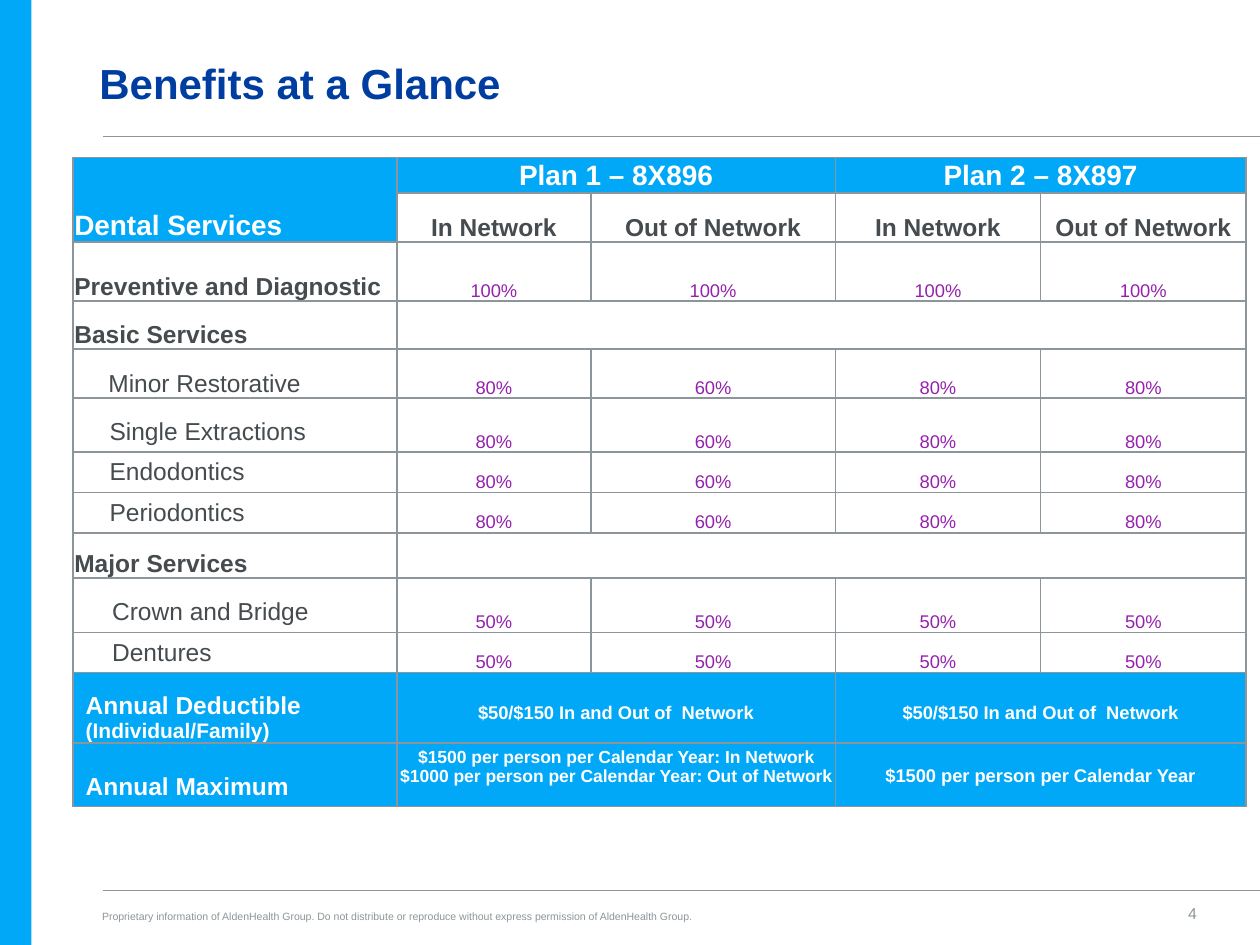
from lxml import etree
from pptx import Presentation
from pptx import util as u
from pptx.dml.color import RGBColor
from pptx.enum import shapes, text
from pptx.oxml.ns import qn

WIDTH, HEIGHT = 10, 7.5
BLUE, NAVY, GREY, INK, PURPLE, WHITE = (
    "00A8F7", "003DA1", "8C9599", "454B4E", "9521AD", "FFFFFF")
LEFT, CENTER, RIGHT = text.PP_ALIGN.LEFT, text.PP_ALIGN.CENTER, text.PP_ALIGN.RIGHT
MIDDLE, BOTTOM = text.MSO_ANCHOR.MIDDLE, text.MSO_ANCHOR.BOTTOM

# Content
TITLE = "Benefits at a Glance"
FOOTER = ("Proprietary information of AldenHealth Group. Do not distribute or "
          "reproduce without express permission of AldenHealth Group.")
PAGE = "4"
NETWORKS = ["In Network", "Out of Network"] * 2
FULL, BASIC, MAJOR = ["100%"] * 4, ["80%", "60%", "80%", "80%"], ["50%"] * 4
DEDUCTIBLE = "$50/$150 In and Out of  Network"
MAXIMUM = ("$1500 per person per Calendar Year: In Network\n"
           "$1000 per person per Calendar Year: Out of Network")

# Kind, row height, label, label indent, values (two values: one per plan)
ROWS = [
    ("plans", 0.28, "Dental Services", 0.01, ["Plan 1 – 8X896", "Plan 2 – 8X897"]),
    ("networks", 0.39, "", 0.01, NETWORKS),
    ("group", 0.47, "Preventive and Diagnostic", 0.01, FULL),
    ("group", 0.38, "Basic Services", 0.01, []),
    ("first", 0.39, "Minor Restorative", 0.28, BASIC),
    ("service", 0.43, "Single Extractions", 0.29, BASIC),
    ("service", 0.32, "Endodontics", 0.29, BASIC),
    ("service", 0.32, "Periodontics", 0.29, BASIC),
    ("group", 0.36, "Major Services", 0.01, []),
    ("service", 0.43, "Crown and Bridge", 0.31, MAJOR),
    ("service", 0.32, "Dentures", 0.31, MAJOR),
    ("total", 0.56, "Annual Deductible\n(Individual/Family)", 0.1, [DEDUCTIBLE] * 2),
    ("limit", 0.49, "Annual Maximum", 0.1,
     [MAXIMUM, "$1500 per person per Calendar Year"]),
]
COLUMNS = [2.57, 1.54, 1.94, 1.63, 1.63]

# Kind: fill, label (size, colour, bold, bottom inset), value (same)
STYLES = {
    "plans": (BLUE, (16, WHITE, True, 0), (16, WHITE, True, 0)),
    "networks": (None, (14, INK, True, 0), (14, INK, True, 0)),
    "group": (None, (14, INK, True, 0), (10.5, PURPLE, False, 0)),
    "first": (None, (14, INK, False, 0), (10.5, PURPLE, False, 0)),
    "service": (None, (14, INK, False, 0.05), (10.5, PURPLE, False, 0)),
    "total": (BLUE, (14, WHITE, True, 0), (10.5, WHITE, True, 0.16)),
    "limit": (BLUE, (14, WHITE, True, 0.05), (10.5, WHITE, True, 0.16)),
}


def rgb(value):
    return RGBColor.from_string(value)


def write(frame, words, size, color, bold=False, align=LEFT, spacing=None):
    frame.text = words
    for paragraph in frame.paragraphs:
        paragraph.alignment = align
        paragraph.line_spacing = spacing
        for run in paragraph.runs:
            run.font.name, run.font.size, run.font.bold = "Arial", u.Pt(size), bold
            run.font.color.rgb = rgb(color)


def add_text(box, words, size, color, anchor, inset=None, **format):
    frame = slide.shapes.add_textbox(*map(u.Inches, box)).text_frame
    frame.word_wrap = True
    frame.vertical_anchor = anchor
    if inset is not None:
        frame.margin_left = frame.margin_right = u.Inches(inset)
        frame.margin_top = frame.margin_bottom = u.Inches(inset)
    write(frame, words, size, color, **format)


def add_borders(cell):
    properties = cell._tc.get_or_add_tcPr()
    for index, side in enumerate(("lnL", "lnR", "lnT", "lnB")):
        line = etree.Element(qn(f"a:{side}"), w=str(u.Pt(1)))
        solid = etree.SubElement(line, qn("a:solidFill"))
        etree.SubElement(solid, qn("a:srgbClr"), val=GREY)
        properties.insert(index, line)


def fill_cell(cell, words, style, indent, align):
    size, color, bold, bottom = style
    cell.margin_left, cell.margin_bottom = u.Inches(indent), u.Inches(bottom)
    if words:
        write(cell.text_frame, words, size, color, bold, align)


prs = Presentation()
prs.slide_width, prs.slide_height = u.Inches(WIDTH), u.Inches(HEIGHT)
slide = prs.slides.add_slide(prs.slide_layouts[6])

# Rules above and below the content
for y in (1.08, 7.07):
    rule = slide.shapes.add_connector(
        shapes.MSO_CONNECTOR.STRAIGHT,
        u.Inches(0.82), u.Inches(y), u.Inches(WIDTH), u.Inches(y))
    rule.line.color.rgb = rgb(GREY)
    rule.line.width = u.Pt(0.5)
    etree.SubElement(rule._element.spPr, qn("a:effectLst"))

# Side band
band = slide.shapes.add_shape(
    shapes.MSO_SHAPE.RECTANGLE, 0, 0, u.Inches(0.25), u.Inches(HEIGHT))
band.shadow.inherit = False
band.fill.solid()
band.fill.fore_color.rgb = rgb(BLUE)
band.line.fill.background()

# Title, footer and page number
add_text((0.69, 0.25, 6.5, 0.86), TITLE, 24, NAVY, MIDDLE, bold=True, spacing=0.9)
add_text((0.81, 7.22, 6.39, 0.1), FOOTER, 6, GREY, BOTTOM, inset=0)
add_text((8.33, 7.14, 1.17, 0.18), PAGE, 9, GREY, BOTTOM, inset=0, align=RIGHT)

# Benefits table
benefits = slide.shapes.add_table(
    len(ROWS), len(COLUMNS), u.Inches(0.58), u.Inches(1.25),
    u.Inches(sum(COLUMNS)), u.Inches(sum(row[1] for row in ROWS))).table
benefits.first_row = benefits.horz_banding = False
for column, width in zip(benefits.columns, COLUMNS):
    column.width = u.Inches(width)

for r, (kind, height, label, indent, values) in enumerate(ROWS):
    fill, label_style, value_style = STYLES[kind]
    benefits.rows[r].height = u.Inches(height)
    for cell in benefits.rows[r].cells:
        cell.margin_left = cell.margin_right = cell.margin_top = u.Inches(0.01)
        cell.margin_bottom = 0
        cell.vertical_anchor = MIDDLE if kind == "plans" else BOTTOM
        if fill:
            cell.fill.solid()
            cell.fill.fore_color.rgb = rgb(fill)
        else:
            cell.fill.background()
        add_borders(cell)
    fill_cell(benefits.cell(r, 0), label, label_style, indent, LEFT)

    span = 4 // max(len(values), 1)
    for i, value in enumerate(values or [""]):
        first = benefits.cell(r, 1 + i * span)
        if span > 1:
            first.merge(benefits.cell(r, (i + 1) * span))
        fill_cell(first, value, value_style, 0.01, CENTER)

# Header label spans both header rows; smaller lines within totals
heading = benefits.cell(0, 0)
heading.merge(benefits.cell(1, 0))
heading.vertical_anchor = BOTTOM
benefits.cell(11, 0).text_frame.paragraphs[1].runs[0].font.size = u.Pt(12)
for paragraph in benefits.cell(12, 1).text_frame.paragraphs:
    paragraph.runs[0].font.size = u.Pt(10)

prs.save("out.pptx")
